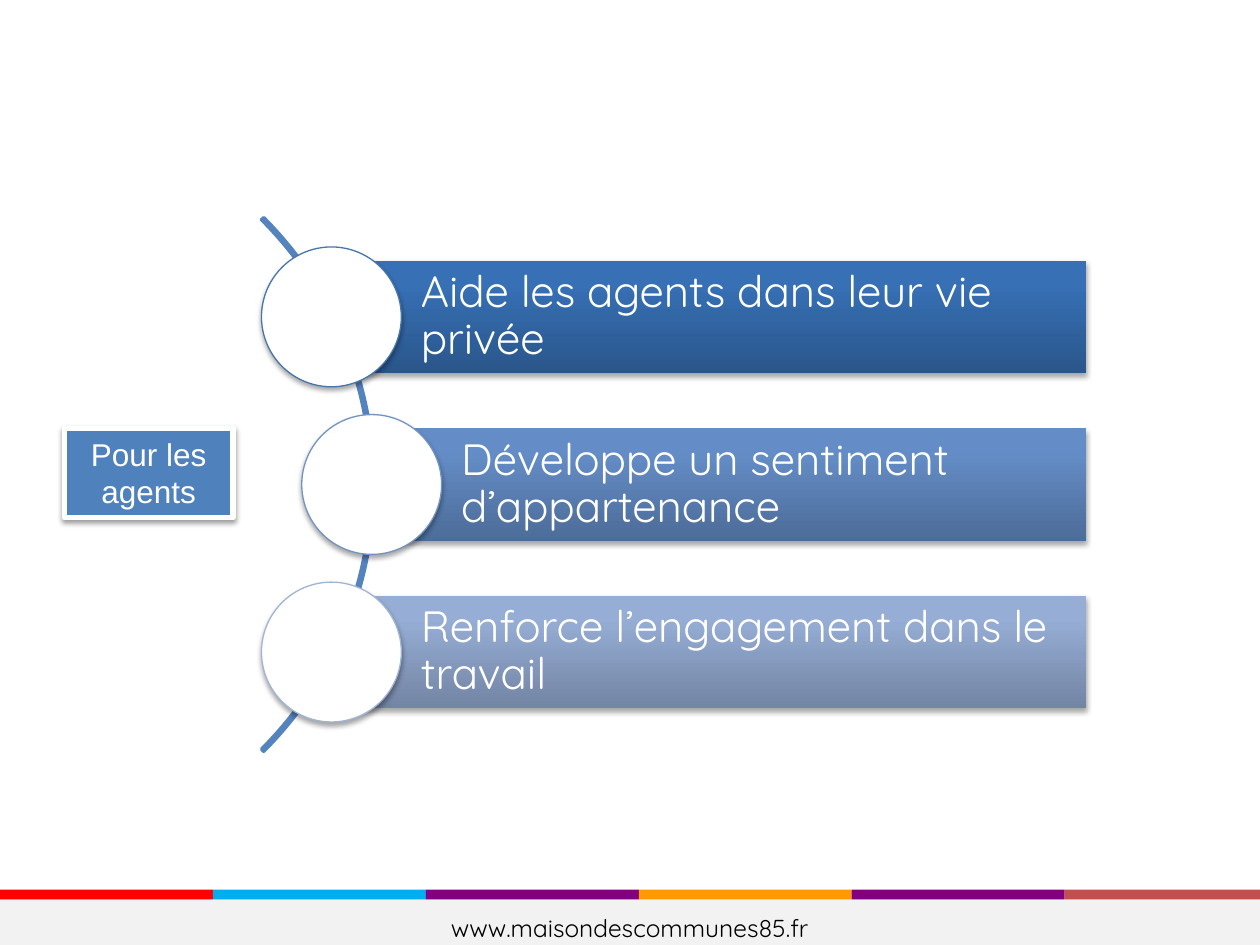
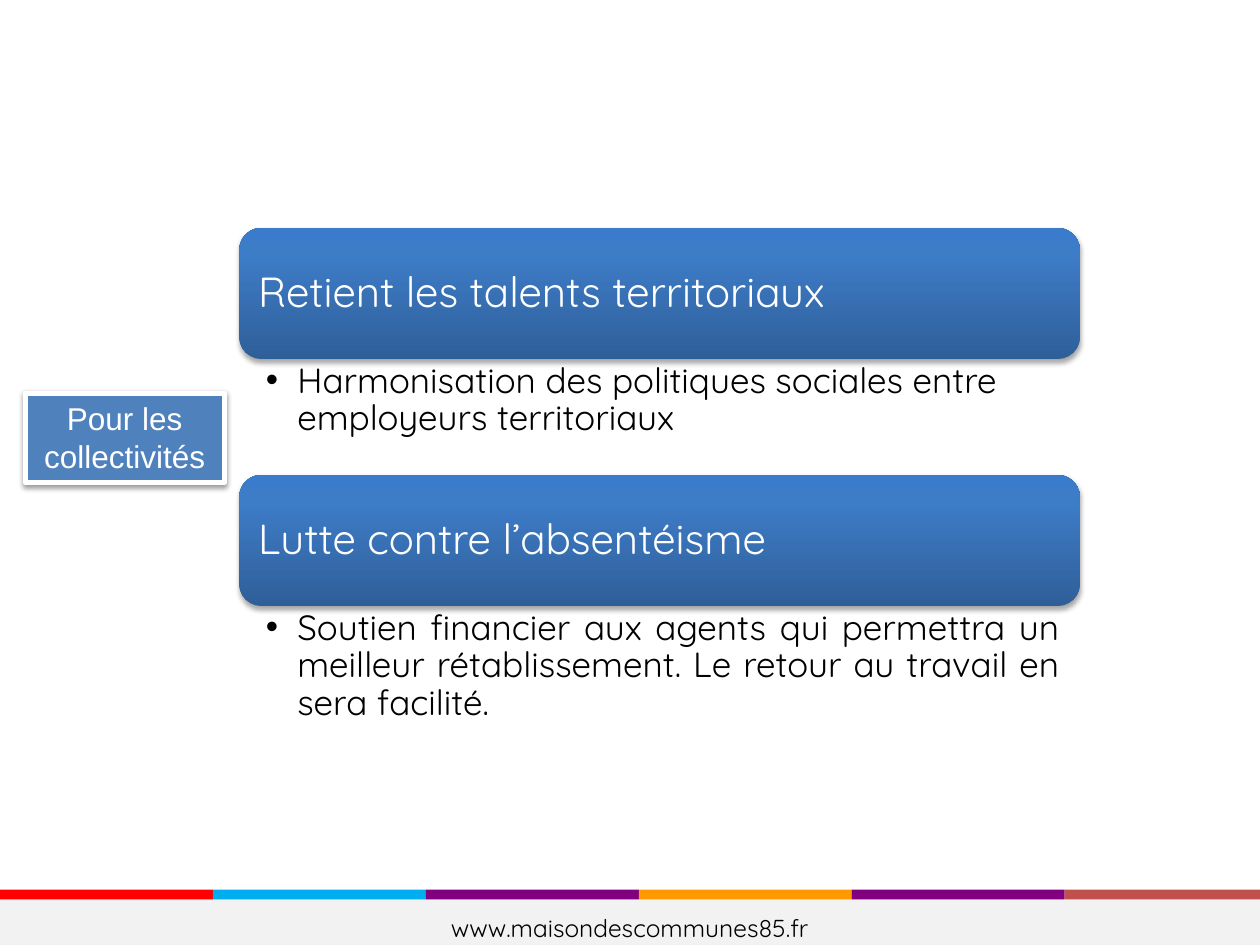
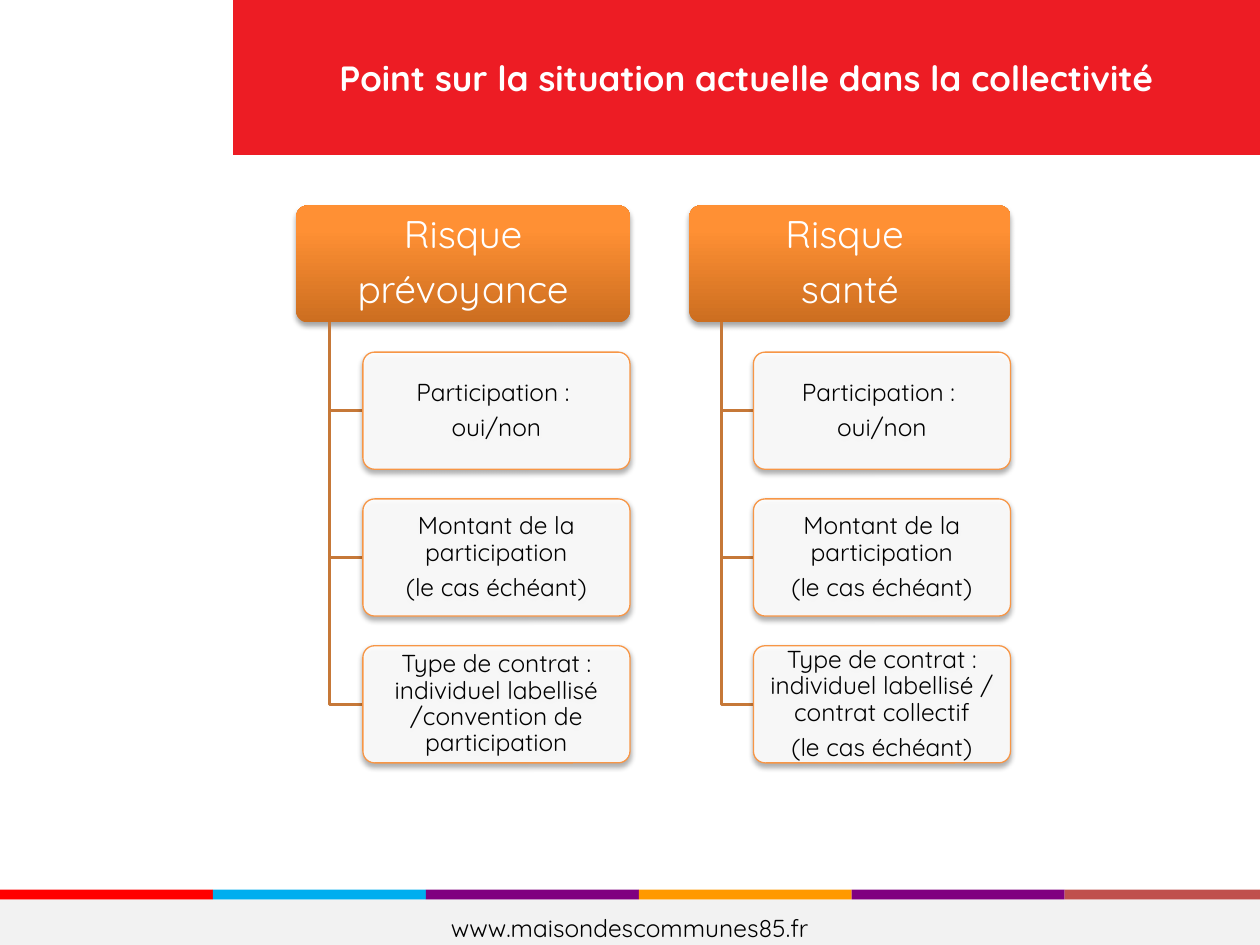
from copy import deepcopy
from dataclasses import dataclass

from pptx import Presentation, util as u
from pptx.dml.color import RGBColor
from pptx.enum import shapes, text
from pptx.oxml import parse_xml
from pptx.oxml.ns import nsdecls, qn

COLS, ROWS = 100, 75
UNIT = u.Inches(0.1)
SHAPE = shapes.MSO_SHAPE
ALIGN = text.PP_ALIGN
ANCHOR = text.MSO_ANCHOR


@dataclass(frozen=True)
class Theme:
    font: str = "Quicksand"
    label_font: str = "Arial"
    white: str = "FFFFFF"
    black: str = "000000"
    footer: str = "F2F2F2"
    title: str = "ED1C24"
    label: str = "4F81BD"
    arc: str = "5483BE"
    branch: str = "C67838"
    leaf_line: str = "F79646"
    stripes: tuple = ("FF0000", "00AEEF", "800080", "FF9900", "800080", "C0504D")
    card: tuple = ("2F5F99", "3D7CC7", "3A7CCB")
    root: tuple = ("CC6E20", "FF9034", "FF9136")
    bar_size: int = 25
    card_size: int = 24
    root_size: int = 22
    body_size: int = 20
    label_size: int = 18
    small_size: int = 14


T = Theme()

BENEFITS = [
    # text, left column, gradient, circle outline
    ("Aide les agents dans leur vie privée", 26.3,
     ("2A568B", "3770B5", "3570B8"), "4875AC"),
    ("Développe un sentiment d’appartenance", 29.5,
     ("4D6C99", "648DC7", "638DCA"), "7393C1"),
    ("Renforce l’engagement dans le travail", 26.3,
     ("7385A4", "96ADD5", "95ADD7"), "A2B4D4"),
]
GOALS = [
    # heading, note, rows of the note, alignment
    ("Retient les talents territoriaux",
     "Harmonisation des politiques sociales entre employeurs territoriaux",
     9.2, ALIGN.LEFT),
    ("Lutte contre l’absentéisme",
     "Soutien financier aux agents qui permettra un meilleur rétablissement. "
     "Le retour au travail en sera facilité. ", 13.9, ALIGN.JUSTIFY),
]
IF_ANY = "(le cas échéant)"
SHARED_LEAVES = [["Participation : ", "oui/non"],
                 ["Montant de la participation", IF_ANY]]
RISKS = [
    # left column, columns, root, leaves
    (23.5, 26.5, ["Risque", "prévoyance"], SHARED_LEAVES + [
        ["Type de contrat : individuel labellisé /convention de participation"]]),
    (54.7, 25.5, ["Risque ", "santé"], SHARED_LEAVES + [
        ["Type de contrat : individuel labellisé / contrat collectif", IF_ANY]]),
]


def grid(*cells):
    return [round(c * UNIT) for c in cells]


def rgb(color):
    return RGBColor.from_string(color)


def write(s, paragraphs, size, color=T.white, font=T.font, bold=False,
          align=ALIGN.LEFT, anchor=ANCHOR.MIDDLE, insets=(1, 0.5, 1, 0.5),
          wrap=True, spacing=None, after=0, bullet=False):
    """Fill a shape with text; after is a share of the type size."""
    tf = s.text_frame
    tf.word_wrap = wrap
    tf.vertical_anchor = anchor
    tf.margin_left, tf.margin_top, tf.margin_right, tf.margin_bottom = grid(*insets)
    for i, line in enumerate(paragraphs):
        p = tf.add_paragraph() if i else tf.paragraphs[0]
        if bullet:
            add_bullet(p)
        p.alignment = align
        if spacing:
            p.line_spacing = spacing
        if after:
            p.space_after = u.Pt(size * after)
        r = p.add_run()
        r.text = line
        r.font.name, r.font.size, r.font.bold = font, u.Pt(size), bold
        r.font.color.rgb = rgb(color)


def add_bullet(p):
    p.level = 1
    pPr = p._p.get_or_add_pPr()
    pPr.set("marL", str(u.Inches(0.25)))
    pPr.set("indent", str(-u.Inches(0.25)))
    pPr.append(parse_xml(f'<a:buFont {nsdecls("a")} typeface="Arial"/>'))
    pPr.append(parse_xml(f'<a:buChar {nsdecls("a")} char="•"/>'))


def set_gradient(s, colors):
    """Three stops, running from the bottom edge to the top."""
    s.fill.gradient()
    s.fill.gradient_angle = 90
    stops = s._element.spPr.find(".//" + qn("a:gsLst"))
    stops.append(deepcopy(stops[-1]))
    for stop, position, color in zip(s.fill.gradient_stops, (0, 0.8, 1), colors):
        stop.position = position
        stop.color.rgb = rgb(color)


def set_line(s, color, width):
    s.line.color.rgb = rgb(color)
    s.line.width = u.Pt(width)


def add_shadow(s, alpha=35, distance=1.8):
    s._element.spPr.find(qn("a:effectLst")).append(parse_xml(
        f'<a:outerShdw {nsdecls("a")} blurRad="{u.Pt(3.1)}" dist="{u.Pt(distance)}" '
        f'dir="5400000" rotWithShape="0"><a:srgbClr val="{T.black}">'
        f'<a:alpha val="{alpha * 1000}"/></a:srgbClr></a:outerShdw>'))


def add_block(slide, kind, cells, fill=None, line=None, width=0.75, adjust=()):
    """Add a preset shape; fill is one colour, a gradient's colours or None."""
    s = slide.shapes.add_shape(kind, *grid(*cells))
    s.shadow.inherit = False
    for i, value in enumerate(adjust):
        s.adjustments[i] = value
    if isinstance(fill, tuple):
        set_gradient(s, fill)
    elif fill:
        s.fill.solid()
        s.fill.fore_color.rgb = rgb(fill)
    else:
        s.fill.background()
    if line:
        set_line(s, line, width)
    else:
        s.line.fill.background()
    return s


def add_label(slide, cells, caption):
    s = add_block(slide, SHAPE.RECTANGLE, cells, T.label, T.white, 3)
    add_shadow(s, alpha=38, distance=1.6)
    write(s, [caption], T.label_size, font=T.label_font, align=ALIGN.CENTER,
          anchor=ANCHOR.TOP)
    s.text_frame.auto_size = text.MSO_AUTO_SIZE.SHAPE_TO_FIT_TEXT


def add_footer(slide):
    top, step = 70.6, 16.9
    for i, color in enumerate(T.stripes):
        left = i * step
        add_block(slide, SHAPE.RECTANGLE,
                  (left, top, min(step, COLS - left), 0.8), color)
    s = add_block(slide, SHAPE.RECTANGLE, (0, top + 0.8, COLS, 4.4), T.footer)
    write(s, ["www.maisondescommunes85.fr"], T.small_size, T.black,
          align=ALIGN.CENTER, wrap=False)


def add_title(slide, caption):
    s = add_block(slide, SHAPE.RECTANGLE, (18.5, 0, COLS - 18.5, 12.3), T.title)
    write(s, [caption], T.body_size, bold=True, align=ALIGN.CENTER)


def add_benefit(slide, top, caption, left, colors, outline):
    """A bar with a circle centred on its left end."""
    height, right, diameter = 8.9, 86.2, 11.1
    bar = add_block(slide, SHAPE.RECTANGLE, (left, top, right - left, height), colors)
    add_shadow(bar)
    write(bar, [caption], T.bar_size, insets=(7.1, 0.7, 0.7, 0.7),
          spacing=0.9, after=0.35)
    circle = add_block(slide, SHAPE.OVAL,
                       (left - diameter / 2, top + (height - diameter) / 2,
                        diameter, diameter), T.white, outline)
    add_shadow(circle)


def add_goal(slide, top, heading, note, note_rows, align):
    """A heading card with its bulleted note; returns the row below them."""
    left, width, height = 19, 66.7, 10.4
    card = add_block(slide, SHAPE.ROUNDED_RECTANGLE, (left, top, width, height), T.card)
    add_shadow(card)
    write(card, [heading], T.card_size, insets=(1, 1, 1, 1), spacing=0.9, after=0.35)
    box = slide.shapes.add_textbox(*grid(left, top + height, width, note_rows))
    write(box, [note], T.body_size, T.black, align=align, anchor=ANCHOR.TOP,
          insets=(2.1, 0.3, 1.6, 0.3), spacing=0.9, after=0.2, bullet=True)
    return top + height + note_rows


def add_branch(slide, x, top, bottom, right):
    pen = slide.shapes.build_freeform(*grid(x, top))
    pen.add_line_segments([grid(x, bottom), grid(right, bottom)], close=False)
    s = pen.convert_to_shape()
    s.shadow.inherit = False
    s.fill.background()
    set_line(s, T.branch, 2)


def add_tree(slide, left, width, root, leaves):
    """A root box whose leaves hang from a trunk at a tenth of its width."""
    top, height, step = 16.3, 9.3, 11.65
    style = dict(align=ALIGN.CENTER, spacing=0.9, after=0.35)
    s = add_block(slide, SHAPE.ROUNDED_RECTANGLE, (left, top, width, height),
                  T.root, adjust=[0.1])
    add_shadow(s)
    write(s, root, T.root_size, insets=(0.5, 0.3, 0.5, 0.3), **style)
    leaf_left = left + 0.2 * width
    for i, lines in enumerate(leaves, 1):
        y = top + i * step
        add_branch(slide, left + 0.1 * width, top + height, y + height / 2, leaf_left)
        leaf = add_block(slide, SHAPE.ROUNDED_RECTANGLE,
                         (leaf_left, y, 0.8 * width, height),
                         T.white, T.leaf_line, adjust=[0.1])
        color = leaf._element.spPr.find(qn("a:solidFill"))[0]
        color.append(parse_xml(f'<a:alpha {nsdecls("a")} val="90000"/>'))
        add_shadow(leaf)
        write(leaf, lines, T.small_size, T.black, insets=(0.3, 0.2, 0.3, 0.2), **style)


def add_slide(prs):
    slide = prs.slides.add_slide(prs.slide_layouts[6])
    add_footer(slide)
    return slide


def build_agents(prs):
    slide = add_slide(prs)
    add_block(slide, SHAPE.BLOCK_ARC, (-30.2, 8.5, 59.9, 59.9), line=T.arc, width=2,
              adjust=[189, 27, 0.004])
    for i, benefit in enumerate(BENEFITS):
        add_benefit(slide, 20.7 + 13.3 * i, *benefit)
    add_label(slide, (5.1, 34, 13.4, 7.1), "Pour les agents")


def build_authorities(prs):
    slide = add_slide(prs)
    top = 18.1
    for goal in GOALS:
        top = add_goal(slide, top, *goal)
    add_label(slide, (2, 31.2, 15.8, 7.1), "Pour les collectivités")


def build_situation(prs):
    slide = add_slide(prs)
    add_title(slide, "Point sur la situation actuelle dans la collectivité")
    for risk in RISKS:
        add_tree(slide, *risk)


def main():
    prs = Presentation()
    prs.slide_width, prs.slide_height = grid(COLS, ROWS)
    build_agents(prs)
    build_authorities(prs)
    build_situation(prs)
    prs.save("out.pptx")


if __name__ == "__main__":
    main()
